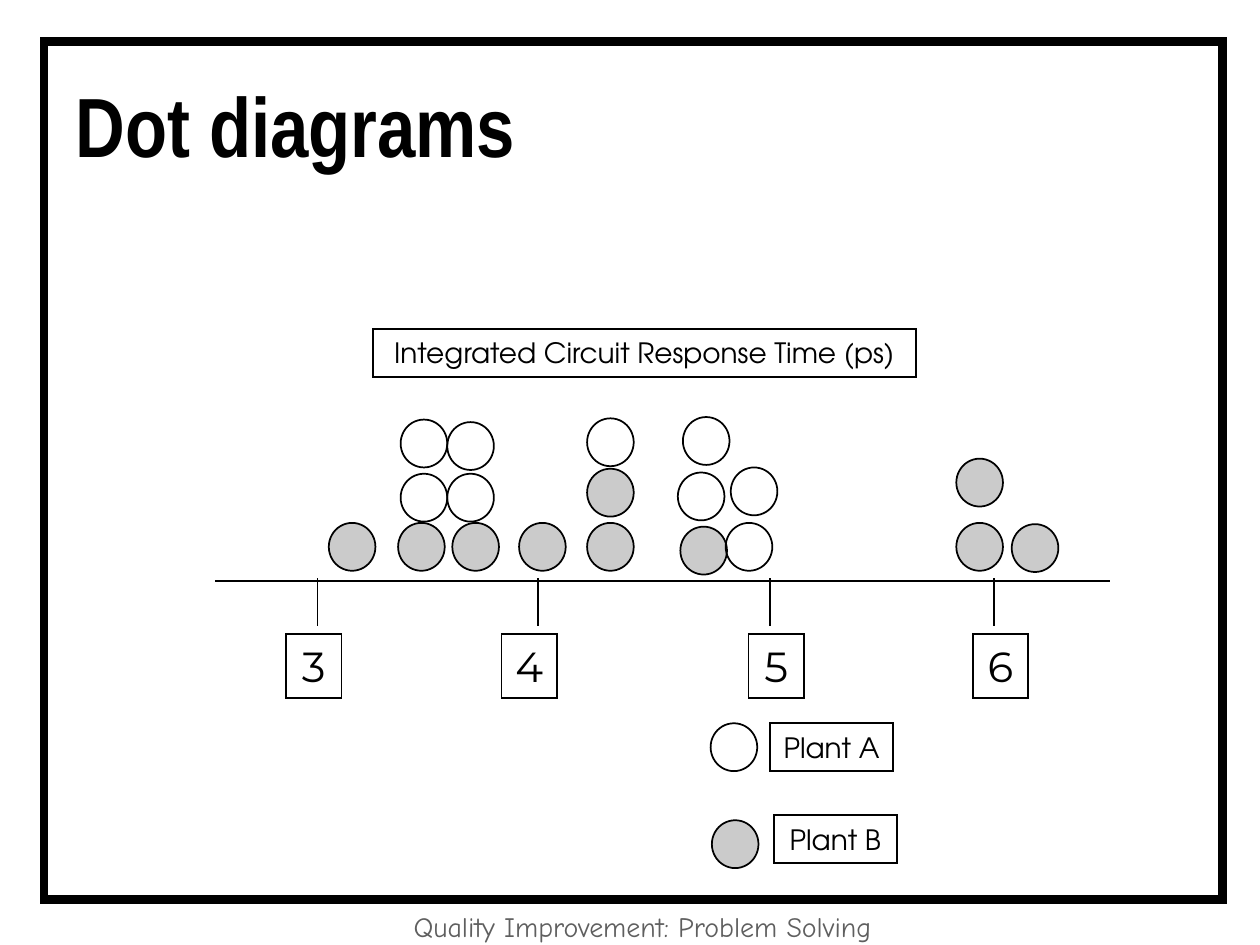
from lxml.etree import SubElement
from pptx import Presentation
from pptx.dml.color import RGBColor
from pptx.enum.shapes import MSO_CONNECTOR as Connector, MSO_SHAPE as Shape
from pptx.enum.text import MSO_ANCHOR as Anchor, MSO_AUTO_SIZE as AutoSize, PP_ALIGN as Align
from pptx.oxml.ns import qn
from pptx.util import Inches, Pt

COLORS = {"black": "000000", "plant_b": "CBCBCB", "footer": "5F5F5F"}
FONTS = {"title": "Arial Narrow", "footer": "Comic Neue",
         "scale": "Montserrat", "label": "TeX Gyre Adventor"}

TITLE = "Dot diagrams"
FOOTER = "Quality Improvement: Problem Solving"
AXIS = (1.71, 8.81, 4.61)
TICK_TOP, TICK_BOTTOM = 4.59, 4.97
TICKS = [("3", 2.52, 2.27), ("4", 4.27, 3.98), ("5", 6.11, 5.94), ("6", 7.89, 7.72)]
SCALE_TOP, SCALE_WIDTH, SCALE_HEIGHT = 5.03, 0.44, 0.51
DOT_WIDTH, DOT_HEIGHT = 0.37, 0.38
PLANT_B_DOTS = [(2.61, 4.15), (3.16, 4.15), (3.59, 4.15), (4.12, 4.15),
                (4.66, 4.15), (4.66, 3.72), (5.4, 4.18),
                (7.59, 4.15), (7.59, 3.64), (8.03, 4.16), (5.65, 6.51)]
PLANT_A_DOTS = [(3.18, 3.76), (3.18, 3.33), (3.55, 3.76), (3.55, 3.35),
                (4.66, 3.32), (5.38, 3.75), (5.42, 3.31),
                (5.76, 4.15), (5.8, 3.71), (5.64, 5.74)]
LABELS = [("Plant A", 6.11, 5.74, 0.98), ("Plant B", 6.14, 6.47, 0.98),
          ("Integrated Circuit Response Time (ps)", 2.96, 2.61, 4.31)]
LABEL_HEIGHT = 0.38


def color(name):
    """Return the named colour."""
    return RGBColor.from_string(COLORS[name])


def write(shape, text, font, size, align=Align.CENTER, ink="black"):
    """Put one formatted, vertically centred paragraph in a shape."""
    frame = shape.text_frame
    frame.text = text
    frame.vertical_anchor = Anchor.MIDDLE
    paragraph = frame.paragraphs[0]
    paragraph.alignment = align
    paragraph.font.name = FONTS[font]
    paragraph.font.size = Pt(size)
    paragraph.font.color.rgb = color(ink)
    return paragraph


def add_outline(slide, kind, left, top, width, height, fill=None, line_width=1):
    """Add a black-outlined shape, filled only when a colour is given."""
    shape = slide.shapes.add_shape(kind, *map(Inches, (left, top, width, height)))
    shape.shadow.inherit = False
    if fill:
        shape.fill.solid()
        shape.fill.fore_color.rgb = color(fill)
    else:
        shape.fill.background()
    shape.line.color.rgb = color("black")
    shape.line.width = Pt(line_width)
    SubElement(shape.line._get_or_add_ln(), qn("a:miter"), lim="800000")
    return shape


def add_box(slide, text, left, top, width, height, font, size):
    """Add an outlined box that fits its unwrapped text."""
    shape = add_outline(slide, Shape.RECTANGLE, left, top, width, height)
    write(shape, text, font, size)
    shape.text_frame.word_wrap = False
    shape.text_frame.auto_size = AutoSize.SHAPE_TO_FIT_TEXT


def add_line(slide, *ends):
    """Add a thin black straight line."""
    line = slide.shapes.add_connector(Connector.STRAIGHT, *map(Inches, ends))
    line.line.color.rgb = color("black")
    line.line.width = Pt(1)
    SubElement(line._element.spPr, qn("a:effectLst"))


def main():
    """Build the dot diagram slide."""
    presentation = Presentation()
    presentation.slide_width, presentation.slide_height = Inches(10), Inches(7.5)
    slide = presentation.slides.add_slide(presentation.slide_layouts[5])

    add_outline(slide, Shape.RECTANGLE, 0.35, 0.33, 9.35, 6.81, line_width=5)
    footer = slide.shapes.add_textbox(*map(Inches, (3.1, 7.2, 4, 0.3)))
    footer.text_frame.word_wrap = False
    write(footer, FOOTER, "footer", 16, ink="footer")

    title = slide.shapes.title
    title.left, title.top, title.width, title.height = map(Inches, (0.5, 0.46, 7.58, 1.25))
    heading = write(title, TITLE, "title", 48, Align.LEFT)
    heading.font.bold = True
    heading.line_spacing = 0.7
    title.text_frame.auto_size = AutoSize.NONE

    axis_left, axis_right, axis_y = AXIS
    add_line(slide, axis_left, axis_y, axis_right, axis_y)
    for value, x, box_left in TICKS:
        add_line(slide, x, TICK_TOP, x, TICK_BOTTOM)
        add_box(slide, value, box_left, SCALE_TOP, SCALE_WIDTH, SCALE_HEIGHT, "scale", 24)

    for dots, fill in ((PLANT_B_DOTS, "plant_b"), (PLANT_A_DOTS, None)):
        for left, top in dots:
            add_outline(slide, Shape.OVAL, left, top, DOT_WIDTH, DOT_HEIGHT, fill)

    for text, left, top, width in LABELS:
        add_box(slide, text, left, top, width, LABEL_HEIGHT, "label", 16)

    presentation.save("out.pptx")


if __name__ == "__main__":
    main()
